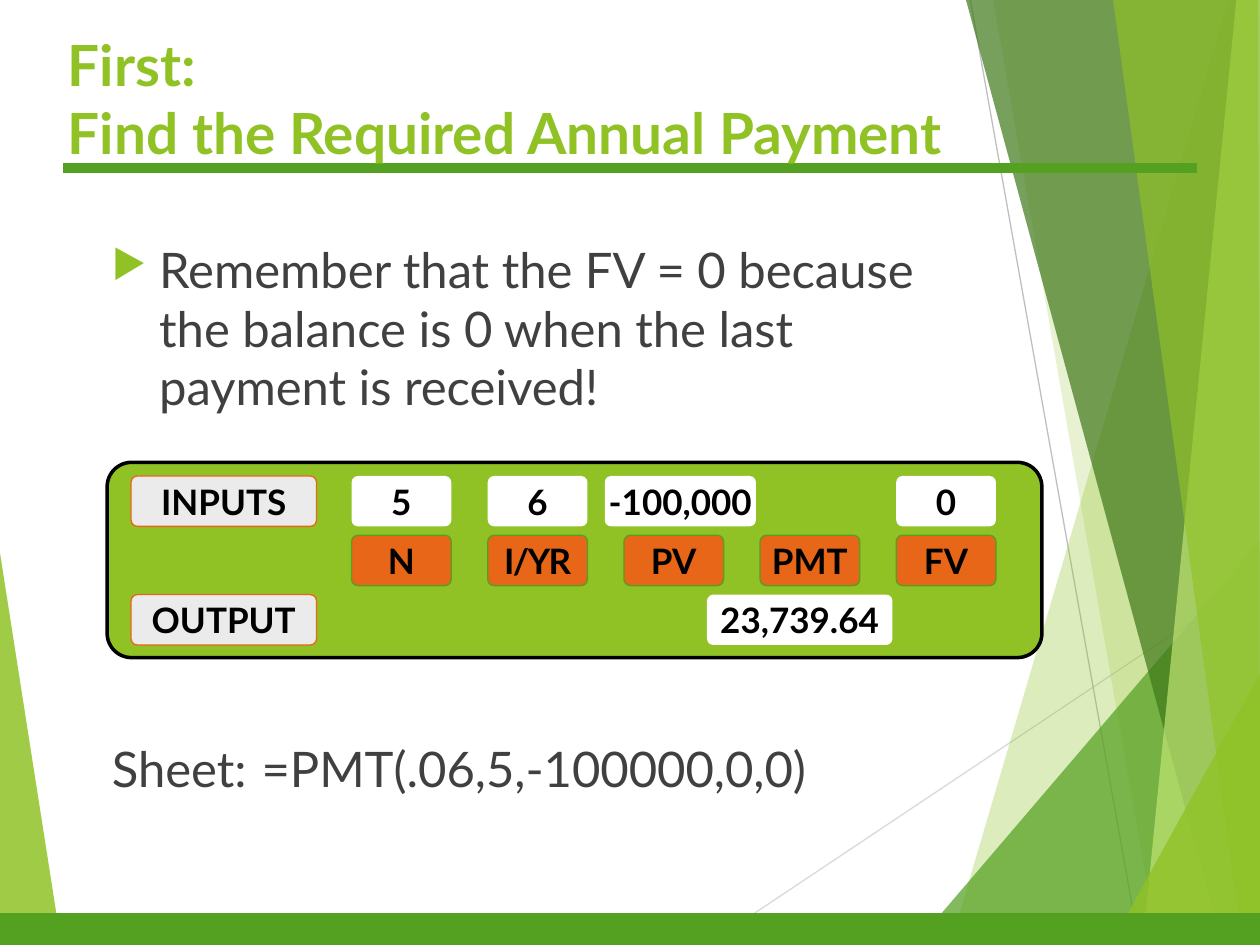
from lxml.etree import SubElement
from pptx import Presentation
from pptx.dml.color import RGBColor
from pptx.enum.shapes import MSO_CONNECTOR as CONN, MSO_SHAPE as SHAPE
from pptx.enum.text import MSO_ANCHOR as ANCHOR, PP_ALIGN as ALIGN
from pptx.oxml.ns import qn
from pptx.util import Pt

W, H = 720, 540
LIME, GREEN, ORANGE = "90C226", "54A021", "E76618"
GREY, WHITE, BLACK, TEXT = "EBEBEB", "FFFFFF", "000000", "404040"


def rgb(hex_color):
    return RGBColor.from_string(hex_color)


def add_xml(parent, tag, **attrs):
    return SubElement(parent, qn(tag), {k: str(v) for k, v in attrs.items()})


class Deck:
    font = "Lato"

    def __init__(self):
        self.prs = Presentation()
        self.prs.slide_width, self.prs.slide_height = Pt(W), Pt(H)
        self.s = self.prs.slides.add_slide(self.prs.slide_layouts[6])

    def paint(self, sp, fill, line=None, width=0.75, alpha=None):
        sp.shadow.inherit = False
        sp.fill.solid()
        sp.fill.fore_color.rgb = rgb(fill)
        if alpha:
            color = sp.fill._xPr.find(qn("a:solidFill"))[0]
            add_xml(color, "a:alpha", val=alpha * 1000)
        if line:
            sp.line.color.rgb = rgb(line)
            sp.line.width = Pt(width)
        else:
            sp.line.fill.background()

    def style(self, p, **fmt):
        for name, value in dict(name=self.font, **fmt).items():
            if name == "color":
                p.font.color.rgb = rgb(value)
            else:
                setattr(p.font, name, value)

    def facet(self, points, fill, alpha):
        """Translucent polygon of the backdrop."""
        pts = [(Pt(x), Pt(y)) for x, y in points]
        builder = self.s.shapes.build_freeform(*pts[0])
        builder.add_line_segments(pts[1:], close=True)
        self.paint(builder.convert_to_shape(), fill, alpha=alpha)

    def line(self, x1, y1, x2, y2, color, width=0.75):
        cx = self.s.shapes.add_connector(CONN.STRAIGHT, Pt(x1), Pt(y1), Pt(x2), Pt(y2))
        cx.line.color.rgb = rgb(color)
        cx.line.width = Pt(width)
        add_xml(cx._element.spPr, "a:effectLst")

    def box(self, kind, x, y, w, h, fill, line=None, width=0.75):
        sp = self.s.shapes.add_shape(kind, Pt(x), Pt(y), Pt(w), Pt(h))
        self.paint(sp, fill, line, width)
        if kind == SHAPE.ROUNDED_RECTANGLE:
            sp.adjustments[0] = 0.125
        return sp

    def key(self, text, x, y, w, fill, line=None, spacing=None):
        """Calculator key or value field with a centred label."""
        sp = self.box(SHAPE.ROUNDED_RECTANGLE, x, y, w, 28.8, fill, line)
        tf = sp.text_frame
        tf.word_wrap = False
        tf.vertical_anchor = ANCHOR.MIDDLE
        p = tf.paragraphs[0]
        p.alignment = ALIGN.CENTER
        r = p.add_run()
        r.text = text
        if spacing:
            r._r.get_or_add_rPr().set("spc", str(spacing))
        self.style(p, size=Pt(20), bold=True, color=BLACK)

    def text_frame(self, x, y, w, h):
        tf = self.s.shapes.add_textbox(Pt(x), Pt(y), Pt(w), Pt(h)).text_frame
        tf.word_wrap = True
        return tf

    def title(self, text, x, y, w, h):
        p = self.text_frame(x, y, w, h).paragraphs[0]
        p.text = text
        self.style(p, size=Pt(32.4), bold=True, color=LIME)

    def body(self, bullet, formula, x, y, w, h):
        """A bulleted remark, and a tabbed formula line further down."""
        tf = self.text_frame(x, y, w, h)
        remark, p = tf.paragraphs[0], tf.add_paragraph()
        remark.text, p.text = bullet, formula

        pPr = remark._p.get_or_add_pPr()
        pPr.set("marL", str(Pt(27)))
        pPr.set("indent", str(-Pt(27)))
        add_xml(add_xml(pPr, "a:buClr"), "a:srgbClr", val=LIME)
        add_xml(pPr, "a:buSzPct", val=80000)
        add_xml(pPr, "a:buChar", char="▶")

        p.space_before = Pt(184.4)
        tabs = add_xml(p._p.get_or_add_pPr(), "a:tabLst")
        add_xml(tabs, "a:tab", pos=Pt(85.5), algn="l")
        for item in (remark, p):
            self.style(item, size=Pt(28), color=TEXT)


def backdrop(deck):
    deck.facet([(0, 316), (35, H), (0, H)], LIME, 85)
    deck.line(404, H, W, 329, "D9D9D9")
    deck.line(554.5, 0, 651, H, "BFBFBF")
    facets = [
        ([(702, 0), (543, H), (W, H), (W, 0)], LIME, 30),
        ([(567.5, 0), (661.5, H), (W, H), (W, 0)], LIME, 20),
        ([(522.5, H), (W, 309), (W, H)], GREEN, 72),
        ([(552, 0), (698.5, H), (W, H), (W, 0)], "3F7819", 70),
        ([(706.5, 0), (653, H), (W, H), (W, 0)], "C0E474", 70),
        ([(636, 0), (710, H), (W, H), (719, 0)], LIME, 65),
        ([(634.5, H), (W, 385), (W, H)], LIME, 80),
    ]
    for points, fill, alpha in facets:
        deck.facet(points, fill, alpha)
    deck.line(36, 96, 684, 96, GREEN, 6)
    deck.box(SHAPE.RECTANGLE, 0, 522, W, 18, GREEN, GREEN)


def calculator(deck):
    deck.box(SHAPE.ROUNDED_RECTANGLE, 61.2, 264.2, 534.2, 111.6, LIME, BLACK, 2)
    input_y, key_y, output_y = (272 + 33.9 * row for row in range(3))
    key_w, label_w = 57, 106
    for text, y in (("INPUTS", input_y), ("OUTPUT", output_y)):
        deck.key(text, 74.9, y, label_w, GREY, ORANGE)

    names = ["N", "I/YR", "PV", "PMT", "FV"]
    key_x = {name: 200.9 + 77.8 * i for i, name in enumerate(names)}
    for name, x in key_x.items():
        deck.key(name, x, key_y, key_w, ORANGE, GREEN, -100 if name == "I/YR" else None)
    for name, value in (("N", "5"), ("I/YR", "6"), ("FV", "0")):
        deck.key(value, key_x[name], input_y, key_w, WHITE)
    deck.key("-100,000", 345.6, input_y, 86.4, WHITE)
    deck.key("23,739.64", 404, output_y, label_w, WHITE)


def main():
    deck = Deck()
    backdrop(deck)
    deck.title("First:\vFind the Required Annual Payment", 31.7, 13.7, 548.6, 81.4)
    deck.body(
        "Remember that the FV = 0 because the balance is 0 when the last payment is received!",
        "Sheet:\t=PMT(.06,5,-100000,0,0)",
        56.9, 133.2, 499.7, 305.3,
    )
    calculator(deck)
    deck.prs.save("out.pptx")


if __name__ == "__main__":
    main()
